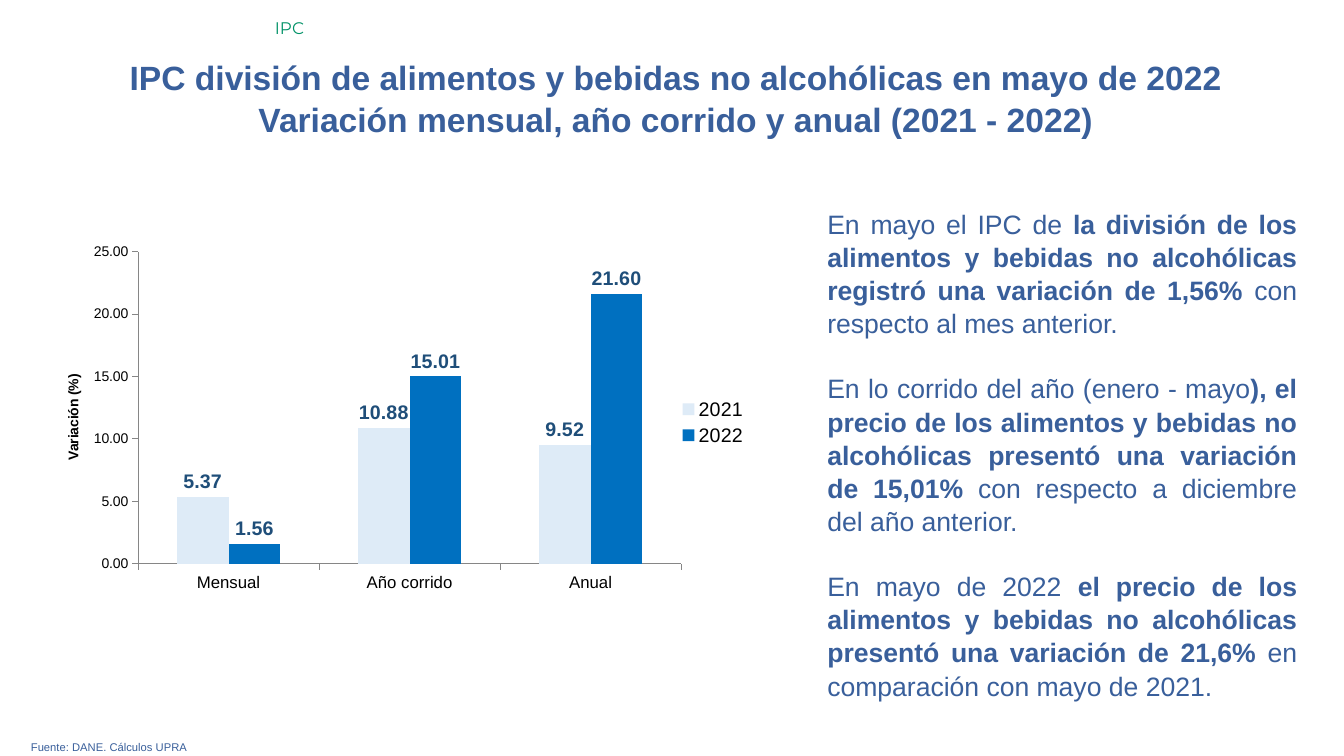
from lxml import etree
from pptx import Presentation
from pptx.chart.data import CategoryChartData
from pptx.dml.color import RGBColor
from pptx.enum import chart as ch, text
from pptx.oxml.ns import qn
from pptx.util import Cm, Pt

BLUE = RGBColor(0x39, 0x5F, 0x9B)
GREEN = RGBColor(0x00, 0x92, 0x67)
BLACK = RGBColor(0x00, 0x00, 0x00)
GREY = RGBColor(0x86, 0x86, 0x86)
LABEL = RGBColor(0x1F, 0x4E, 0x79)
BARS = [RGBColor(0xDE, 0xEB, 0xF7), RGBColor(0x00, 0x70, 0xC0)]


def write(sp, paras, size, color=BLUE, name="Arial", bold=False,
          align=text.PP_ALIGN.JUSTIFY, anchor=text.MSO_ANCHOR.TOP, spacing=1.0, gap=0):
    tf = sp.text_frame
    tf.word_wrap = True
    tf.auto_size = text.MSO_AUTO_SIZE.NONE
    tf.vertical_anchor = anchor
    for i, runs in enumerate(paras):
        p = tf.add_paragraph() if i else tf.paragraphs[0]
        p.alignment = align
        p.line_spacing = spacing
        p.space_before = Pt(gap if i else 0)
        for j, words in enumerate(runs):
            r = p.add_run()
            r.text = words
            r.font.size = Pt(size)
            r.font.name = name
            r.font.bold = bold or j == 1
            r.font.color.rgb = color


prs = Presentation()
prs.slide_width, prs.slide_height = Cm(33.87), Cm(19.05)
s = prs.slides.add_slide(prs.slide_layouts[5])

title = s.shapes.title
title.left, title.top, title.width, title.height = Cm(1.14), Cm(1.3), Cm(31.78), Cm(2.31)
write(title, [["IPC división de alimentos y bebidas no alcohólicas en mayo de 2022"],
              ["Variación mensual, año corrido y anual (2021 - 2022)"]],
      24, bold=True, align=text.PP_ALIGN.CENTER, anchor=text.MSO_ANCHOR.MIDDLE, spacing=1.04)

source = s.shapes.add_textbox(Cm(0.53), Cm(18.52), Cm(32.79), Cm(0.61))
write(source, [["Fuente: DANE. Cálculos UPRA"]], 8)

body = s.shapes.add_textbox(Cm(20.6), Cm(5.08), Cm(12.34), Cm(12.45))
write(body, [
    ["En mayo el IPC de ",
     "la división de los alimentos y bebidas no alcohólicas registró una variación de 1,56% ",
     "con respecto al mes anterior."],
    ["En lo corrido del año (enero - mayo",
     "), el precio de los alimentos y bebidas no alcohólicas presentó una variación de 15,01%",
     " con respecto a diciembre del año anterior."],
    ["En mayo de 2022 ",
     "el precio de los alimentos y bebidas no alcohólicas presentó una variación de 21,6%",
     " en comparación con mayo de 2021."],
], 19, spacing=1.04, gap=22.7)

section = s.shapes.add_textbox(Cm(6.68), Cm(0.33), Cm(27.18), Cm(0.76))
write(section, [["IPC"]], 12, color=GREEN, name="Montserrat", align=text.PP_ALIGN.LEFT)

data = CategoryChartData(number_format="0.00")
data.categories = ["Mensual", "Año corrido", "Anual"]
data.add_series("2021", [5.37, 10.88, 9.52])
data.add_series("2022", [1.56, 15.01, 21.6])
chart = s.shapes.add_chart(ch.XL_CHART_TYPE.COLUMN_CLUSTERED, Cm(1.55), Cm(6.07),
                           Cm(17.55), Cm(9.14), data).chart
chart.has_title = False
chart.font.size = Pt(10)
chart.font.name = "Arial"
chart.font.color.rgb = BLACK

chart.has_legend = True
chart.legend.position = ch.XL_LEGEND_POSITION.RIGHT
chart.legend.include_in_layout = False
chart.legend.font.size = Pt(14)

for axis in (chart.category_axis, chart.value_axis):
    axis.has_major_gridlines = False
    axis.major_tick_mark = ch.XL_TICK_MARK.OUTSIDE
    axis.minor_tick_mark = ch.XL_TICK_MARK.NONE
    axis.format.line.color.rgb = GREY
    axis.format.line.width = Pt(0.75)
chart.category_axis.tick_labels.font.size = Pt(12)
chart.category_axis.tick_label_position = ch.XL_TICK_LABEL_POSITION.LOW

values = chart.value_axis
values.minimum_scale, values.maximum_scale, values.major_unit = 0, 25, 5
values.tick_labels.number_format = "0.00"
values.tick_labels.number_format_is_linked = False
p = values.axis_title.text_frame.paragraphs[0]
r = p.add_run()
r.text = "Variación (%)"
r.font.size = Pt(10)
r.font.name = "Arial"
r.font.bold = True
r.font.color.rgb = BLACK

plot = chart.plots[0]
plot.vary_by_categories = False
plot.gap_width = 150
plot.overlap = 0
for series, color in zip(plot.series, BARS):
    series.format.fill.solid()
    series.format.fill.fore_color.rgb = color
    labels = series.data_labels
    labels.show_value = True
    labels.position = ch.XL_LABEL_POSITION.OUTSIDE_END
    labels.number_format = "0.00"
    labels.number_format_is_linked = False
    labels.font.size = Pt(14)
    labels.font.bold = True
    labels.font.color.rgb = LABEL

area = chart.element.find(".//" + qn("c:plotArea"))
for old in area.findall(qn("c:layout")):
    area.remove(old)
layout = etree.Element(qn("c:layout"))
area.insert(0, layout)
manual = etree.SubElement(layout, qn("c:manualLayout"))
for tag, val in [("layoutTarget", "inner"), ("xMode", "edge"), ("yMode", "edge"),
                 ("x", "0.11"), ("y", "0.03"), ("w", "0.78"), ("h", "0.86")]:
    etree.SubElement(manual, qn("c:" + tag)).set("val", val)

prs.save("out.pptx")
